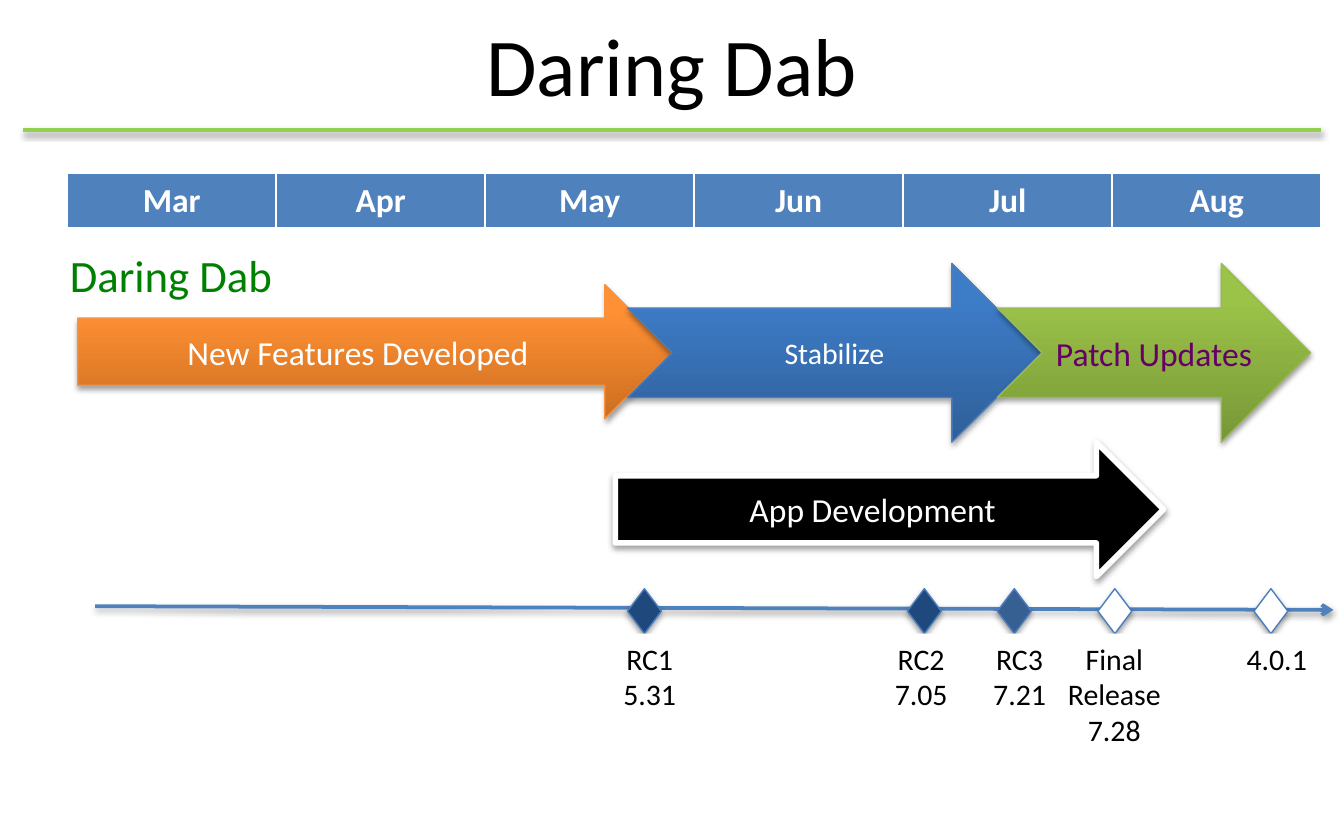
from lxml import etree
from pptx import Presentation
from pptx.dml.color import RGBColor
from pptx.enum.shapes import MSO_CONNECTOR, MSO_SHAPE
from pptx.enum.text import MSO_ANCHOR, PP_ALIGN
from pptx.oxml import parse_xml
from pptx.oxml.ns import nsdecls, qn
from pptx.util import Cm, Pt

STRAIGHT = MSO_CONNECTOR.STRAIGHT
RIGHT_ARROW = MSO_SHAPE.RIGHT_ARROW
NOTCHED_ARROW = MSO_SHAPE.NOTCHED_RIGHT_ARROW
DIAMOND = MSO_SHAPE.DIAMOND
CENTER, LEFT = PP_ALIGN.CENTER, PP_ALIGN.LEFT
MIDDLE = MSO_ANCHOR.MIDDLE

COLORS = {
    "black": "000000", "white": "FFFFFF", "rule": "92D050", "blue": "4F81BD",
    "green": "008000", "purple": "660066", "navy": "1F497D", "steel": "376092",
    "outline": "4B7EBC", "orange_line": "F69240", "lime_line": "98B955",
    "orange_dark": "CC6E20", "orange_light": "FF9034",
    "blue_dark": "2F5F99", "blue_light": "3D7CC7",
    "lime_dark": "779737", "lime_light": "9BC348",
}
RGB = {name: RGBColor.from_string(value) for name, value in COLORS.items()}


def write_text(text_frame, lines, size, color, alignment=CENTER):
    text_frame.word_wrap = True
    for index, line in enumerate(lines):
        paragraph = text_frame.paragraphs[0] if index == 0 else text_frame.add_paragraph()
        paragraph.text = line
        paragraph.alignment = alignment
        paragraph.font.name = "Calibri"
        paragraph.font.size = Pt(size)
        paragraph.font.color.rgb = RGB[color]


def style_outline(shape, color, width):
    """Set the line, then the soft shadow that falls below the shape."""
    shape.line.color.rgb = RGB[color]
    shape.line.width = Pt(width)
    shape.element.spPr.append(parse_xml(
        f'<a:effectLst {nsdecls("a")}>'
        '<a:outerShdw blurRad="40000" dist="22000" dir="5400000" rotWithShape="0">'
        f'<a:srgbClr val="{COLORS["black"]}"><a:alpha val="36000"/></a:srgbClr>'
        '</a:outerShdw></a:effectLst>'))


presentation = Presentation()
presentation.slide_width = Cm(25.4)
presentation.slide_height = Cm(15.88)
slide = presentation.slides.add_slide(presentation.slide_layouts[5])
shapes = slide.shapes

# Title and rule
title = shapes.title
title.left, title.top, title.width, title.height = Cm(1.27), Cm(0.3), Cm(22.86), Cm(1.8)
title.text_frame.vertical_anchor = MIDDLE
write_text(title.text_frame, ["Daring Dab"], 44, "black")
rule = shapes.add_connector(STRAIGHT, Cm(0.43), Cm(2.46), Cm(24.97), Cm(2.46))
style_outline(rule, "rule", 2)

# Month header
months = ["Mar", "Apr", "May", "Jun", "Jul", "Aug"]
table = shapes.add_table(1, len(months), Cm(1.27), Cm(3.28), Cm(23.7), Cm(1.03)).table
for cell, month in zip(table.rows[0].cells, months):
    cell.fill.solid()
    cell.fill.fore_color.rgb = RGB["blue"]
    write_text(cell.text_frame, [month], 18, "white")
    cell.text_frame.paragraphs[0].font.bold = True

# Timeline axis
axis = shapes.add_connector(STRAIGHT, Cm(1.8), Cm(11.46), Cm(25.2), Cm(11.53))
style_outline(axis, "blue", 2)
etree.SubElement(axis.line._get_or_add_ln(), qn("a:tailEnd"), type="arrow")

# Release name
release_name = shapes.add_textbox(Cm(1.07), Cm(4.55), Cm(9.53), Cm(1.27))
write_text(release_name.text_frame, ["Daring Dab"], 24, "green", LEFT)

# Phase arrows: kind, left, top, width, height, fill, line, line width, text, size, text colour
phases = [
    (RIGHT_ARROW, 1.47, 5.38, 11.23, 2.54, "orange", "orange_line", 0.75,
     "New Features Developed", 18, "white"),
    (NOTCHED_ARROW, 11.86, 4.98, 7.82, 3.38, "blue", "outline", 0.75,
     "Stabilize", 16, "white"),
    (NOTCHED_ARROW, 18.85, 4.98, 5.92, 3.38, "lime", "lime_line", 0.75,
     "Patch Updates", 18, "purple"),
    (RIGHT_ARROW, 11.63, 8.36, 10.36, 2.54, "black", "white", 3,
     "App Development", 18, "white"),
]
for kind, left, top, width, height, fill, line, line_width, text, size, color in phases:
    arrow = shapes.add_shape(kind, Cm(left), Cm(top), Cm(width), Cm(height))
    if fill == "black":
        arrow.fill.solid()
        arrow.fill.fore_color.rgb = RGB[fill]
    else:
        arrow.fill.gradient()
        arrow.fill.gradient_angle = 90
        for stop, position, shade in zip(arrow.fill.gradient_stops, (0, 0.8), ("dark", "light")):
            stop.position = position
            stop.color.rgb = RGB[f"{fill}_{shade}"]
    style_outline(arrow, line, line_width)
    arrow.text_frame.vertical_anchor = MIDDLE
    write_text(arrow.text_frame, [text], size, color)

# Milestones: diamond left, fill, label left, width, height, lines
milestones = [
    (11.86, "navy", 11.43, 1.7, 1.63, ["RC1", "5.31"]),
    (17.15, "navy", 16.51, 1.8, 1.63, ["RC2", "7.05"]),
    (20.75, "white", 19.89, 2.34, 2.31, ["Final Release 7.28"]),
    (18.85, "steel", 18.42, 1.7, 1.63, ["RC3", "7.21"]),
    (23.7, "white", 23.28, 1.7, 0.94, ["4.0.1"]),
]
for left, fill, label_left, label_width, label_height, lines in milestones:
    diamond = shapes.add_shape(DIAMOND, Cm(left), Cm(11.13), Cm(0.64), Cm(0.85))
    diamond.fill.solid()
    diamond.fill.fore_color.rgb = RGB[fill]
    style_outline(diamond, "outline", 0.75)
    label = shapes.add_textbox(Cm(label_left), Cm(11.98), Cm(label_width), Cm(label_height))
    label.fill.solid()
    label.fill.fore_color.rgb = RGB["white"]
    write_text(label.text_frame, lines, 16, "black")

presentation.save("out.pptx")
